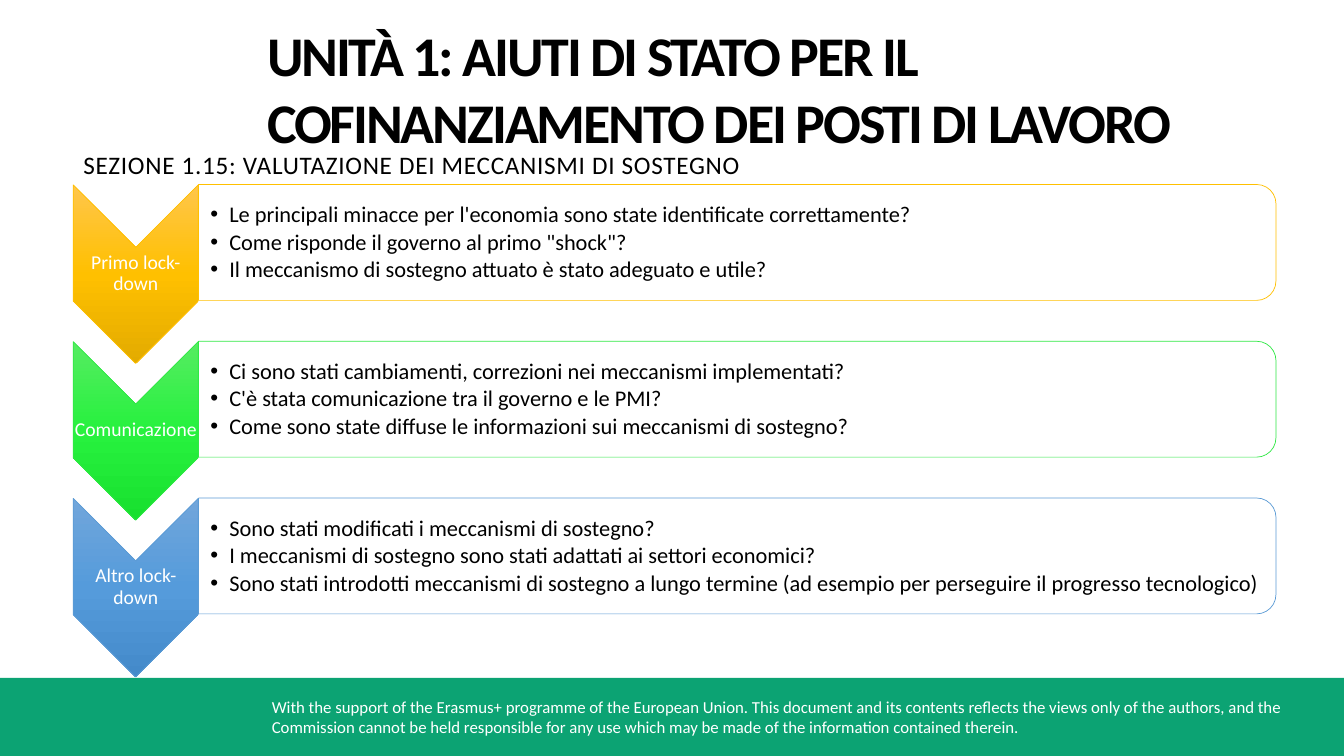
"""Build the slide that assesses the support mechanisms in three phases."""
from lxml.etree import SubElement
from pptx import Presentation
from pptx.dml.color import RGBColor
from pptx.enum.shapes import MSO_SHAPE as Shape
from pptx.enum.text import MSO_ANCHOR as Anchor, MSO_AUTO_SIZE as AutoSize, PP_ALIGN as Align
from pptx.oxml.ns import qn
from pptx.util import Cm, Pt

TITLE = "UNITÀ 1: AIUTI DI STATO PER IL COFINANZIAMENTO DEI POSTI DI LAVORO"
SECTION = "SEZIONE 1.15: VALUTAZIONE DEI MECCANISMI DI SOSTEGNO"
FOOTER = (
    "With the support of the Erasmus+ programme of the European Union. This document and its "
    "contents reflects the views only of the authors, and the Commission cannot be held "
    "responsible for any use which may be made of the information contained therein."
)
PHASES = [
    ("Primo lock-down", "amber", [
        "Le principali minacce per l'economia sono state identificate correttamente?",
        "Come risponde il governo al primo \"shock\"?",
        "Il meccanismo di sostegno attuato è stato adeguato e utile?",
    ]),
    ("Comunicazione", "lime", [
        "Ci sono stati cambiamenti, correzioni nei meccanismi implementati?",
        "C'è stata comunicazione tra il governo e le PMI?",
        "Come sono state diffuse le informazioni sui meccanismi di sostegno?",
    ]),
    ("Altro lock-down", "blue", [
        "Sono stati modificati i meccanismi di sostegno?",
        "I meccanismi di sostegno sono stati adattati ai settori economici?",
        "Sono stati introdotti meccanismi di sostegno a lungo termine "
        "(ad esempio per perseguire il progresso tecnologico)",
    ]),
]
COLORS = {"black": "000000", "white": "FFFFFF", "footer": "0CA373",
          "amber": "FFC000", "lime": "30E845", "blue": "5B9BD5"}
GRADIENTS = {"amber": ("FFC64B", "FFC000", "E3AB00"),
             "lime": ("56EC62", "27F13E", "18E02F"),
             "blue": ("71A6DB", "559BDB", "448ACA")}
WIDTH, HEIGHT = 33.87, 19.05
ROW_STEP = 3.95
CHEVRON = {"center": (3.42, 6.91), "length": 4.5, "breadth": 3.15}
PANEL = {"center": (18.58, 6.11), "length": 2.92, "breadth": 27.15}


def write(box, lines, size, color="black", margins=(0.25, 0.13, 0.25, 0.13), anchor=Anchor.TOP,
          align=Align.LEFT, bold=False, tracking=0, leading=1.0, gap=0, bullets=False):
    frame = box.text_frame
    frame.word_wrap = True
    frame.auto_size = AutoSize.NONE
    frame.vertical_anchor = anchor
    frame.margin_left, frame.margin_top, frame.margin_right, frame.margin_bottom = map(Cm, margins)
    frame.text = "\n".join(lines)
    for para in frame.paragraphs:
        para.alignment, para.line_spacing = align, leading
        para.space_before, para.space_after = Pt(0), Pt(gap)
        properties = para._p.get_or_add_pPr()
        if bullets:
            properties.set("marL", str(Cm(0.48)))
            properties.set("indent", str(Cm(-0.48)))
            SubElement(properties, qn("a:buFont")).set("typeface", "Arial")
            SubElement(properties, qn("a:buChar")).set("char", "•")
        font = para.font
        font.name, font.size, font.bold = "Calibri", Pt(size), bold
        font.color.rgb = RGBColor.from_string(COLORS[color])
        if tracking:
            properties.find(qn("a:defRPr")).set("spc", str(int(tracking * 100)))


def add_text(slide, left, top, width, height, lines, size, **style):
    box = slide.shapes.add_textbox(Cm(left), Cm(top), Cm(width), Cm(height))
    write(box, lines, size, **style)


def add_turned(slide, kind, place, row, color):
    center_x, center_y = place["center"]
    length, breadth = place["length"], place["breadth"]
    shape = slide.shapes.add_shape(
        kind, Cm(center_x - length / 2), Cm(center_y + row * ROW_STEP - breadth / 2),
        Cm(length), Cm(breadth))
    shape.rotation = 90
    shape.shadow.inherit = False
    shape.line.color.rgb = RGBColor.from_string(COLORS[color])
    shape.line.width = Pt(0.5)
    return shape


def fill_gradient(shape, colors):
    shape.fill.gradient()
    gradient = shape._element.spPr.find(qn("a:gradFill"))
    gradient.set("rotWithShape", "0")
    stops = gradient.find(qn("a:gsLst"))
    for stop in list(stops):
        stops.remove(stop)
    for position, color in zip((0, 50000, 100000), colors):
        stop = SubElement(stops, qn("a:gs"), pos=str(position))
        SubElement(stop, qn("a:srgbClr"), val=color)
    direction = gradient.find(qn("a:lin"))
    direction.set("ang", "5400000")
    direction.set("scaled", "0")


def fill_panel(shape):
    shape.fill.solid()
    shape.fill.fore_color.rgb = RGBColor.from_string(COLORS["white"])
    color = shape._element.spPr.find(qn("a:solidFill")).find(qn("a:srgbClr"))
    SubElement(color, qn("a:alpha"), val="90000")


def add_footer(slide):
    top = 17.08
    band = slide.shapes.add_shape(
        Shape.RECTANGLE, 0, Cm(top), Cm(WIDTH), Cm(HEIGHT - top))
    band.shadow.inherit = False
    band.fill.solid()
    band.fill.fore_color.rgb = RGBColor.from_string(COLORS["footer"])
    band.line.fill.background()
    add_text(slide, 6.6, 17.42, 26.47, 1.27, [FOOTER], 12, color="white")


def add_phase(slide, row, label, color, questions):
    offset = row * ROW_STEP
    chevron = add_turned(slide, Shape.CHEVRON, CHEVRON, row, color)
    fill_gradient(chevron, GRADIENTS[color])
    add_text(slide, 1.85, 6.22 + offset, 3.15, 1.35, [label], 14, color="white",
             margins=(0.02,) * 4, anchor=Anchor.MIDDLE, align=Align.CENTER, leading=0.9)
    fill_panel(add_turned(slide, Shape.ROUND_2_SAME_RECTANGLE, PANEL, row, color))
    add_text(slide, 4.98, 4.8 + offset, 27.03, 2.64, questions, 16,
             margins=(0.32, 0.02, 0.02, 0.02), anchor=Anchor.MIDDLE,
             leading=0.9, gap=2.4, bullets=True)


def main():
    deck = Presentation()
    deck.slide_width, deck.slide_height = Cm(WIDTH), Cm(HEIGHT)
    slide = deck.slides.add_slide(deck.slide_layouts[5])
    title = slide.shapes.title
    title.left, title.top, title.width, title.height = Cm(6.71), Cm(0.48), Cm(22.9), Cm(5.2)
    write(title, [TITLE], 40, margins=(0.02, 0.03, 0, 0), bold=True, tracking=-1.5)
    add_footer(slide)
    for row, phase in enumerate(PHASES):
        add_phase(slide, row, *phase)
    add_text(slide, 1.85, 3.64, 18.95, 1.83, [SECTION], 18, tracking=0.5)
    deck.save("out.pptx")


if __name__ == "__main__":
    main()
